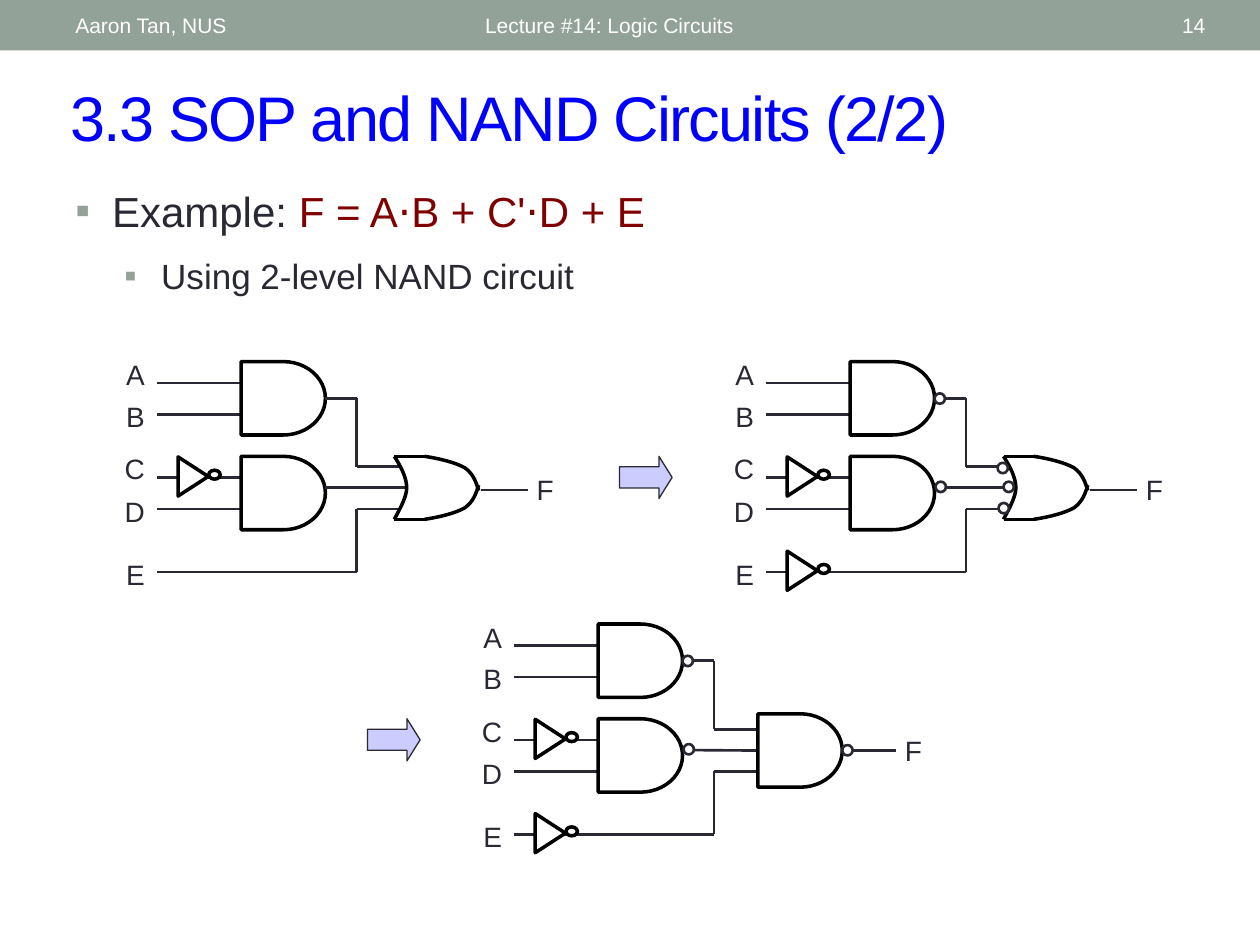
"""Build the SOP and NAND circuits slide."""
import itertools

import lxml.etree
import pptx
import pptx.dml.color
import pptx.enum.shapes
import pptx.enum.text
import pptx.oxml.ns
import pptx.util

Cm = pptx.util.Cm
Pt = pptx.util.Pt
MSO = pptx.enum.shapes.MSO_SHAPE
ALIGN = pptx.enum.text.PP_ALIGN
ANCHOR = pptx.enum.text.MSO_ANCHOR
qn = pptx.oxml.ns.qn

INK, BLACK, WHITE, SAGE = "292934", "000000", "FFFFFF", "93A299"
GATE_W, GATE_H, BUBBLE = 1.7, 1.48, 0.21
INPUTS = {"A": (0, 0.63), "B": (0.84, 1.27), "C": (1.89, 2.54), "D": (2.75, 3.17), "E": (4.02, 4.44)}
WIRE_X, GATE_X, BUS_X = 1.06, 2.75, 5.08
OR_H = 1.27
OR_BACK = [(0, 0), (0.13, 0.2), (0.25, 0.43), (0.25, 0.64), (0.25, 0.84), (0.05, 1.17), (0, OR_H)]
OR_TOP = [(0.61, 0), (0.94, 0.05), (1.24, 0.13), (1.42, 0.23), (1.6, 0.36), (1.65, 0.53), (1.7, 0.69)]


def color(value):
    """Return the colour for a hex string."""
    return pptx.dml.color.RGBColor.from_string(value)


def style(shape, fill, line, width):
    """Set fill and line of a shape, without shadow."""
    shape.shadow.inherit = False
    if fill:
        shape.fill.solid()
        shape.fill.fore_color.rgb = color(fill)
    else:
        shape.fill.background()
    if line:
        shape.line.color.rgb = color(line)
        shape.line.width = Pt(width)
    else:
        shape.line.fill.background()
    return shape


def add_shape(shapes, kind, x, y, w, h, fill=None, line=None, width=2):
    """Add a styled preset shape."""
    shape = shapes.add_shape(kind, Cm(x), Cm(y), Cm(w), Cm(h))
    return style(shape, fill, line, width)


def set_font(font, size, ink):
    """Set size and colour of an Arial font."""
    font.name, font.size = "Arial", Pt(size)
    font.color.rgb = color(ink)


def add_text(shapes, text, x, y, w, h, size, ink, align=ALIGN.LEFT, anchor=ANCHOR.TOP):
    """Add a one-paragraph text box and return its paragraph."""
    tf = shapes.add_textbox(Cm(x), Cm(y), Cm(w), Cm(h)).text_frame
    tf.word_wrap, tf.vertical_anchor = True, anchor
    p = tf.paragraphs[0]
    p.text, p.alignment = text, align
    set_font(p.font, size, ink)
    return p


def add_wire(shapes, *points, ink=INK, width=1.5):
    """Chain straight connectors through the points and return them."""
    wires = []
    for (x1, y1), (x2, y2) in itertools.pairwise(points):
        c = shapes.add_connector(pptx.enum.shapes.MSO_CONNECTOR.STRAIGHT, Cm(x1), Cm(y1), Cm(x2), Cm(y2))
        c.line.color.rgb = color(ink)
        c.line.width = Pt(width)
        lxml.etree.SubElement(c._element.spPr, qn("a:effectLst"))
        wires.append(c)
    return wires


def add_gate(shapes, x, y):
    """Add an AND gate body."""
    return add_shape(shapes, MSO.FLOWCHART_DELAY, x, y, GATE_W, GATE_H, line=BLACK)


def add_bubble(shapes, x, y):
    """Add an inversion bubble."""
    add_shape(shapes, MSO.OVAL, x, y, BUBBLE, BUBBLE, WHITE, INK, 1.5)


def add_inverter(shapes, x, y):
    """Add a NOT gate whose unrotated triangle starts at x, y."""
    add_shape(shapes, MSO.FLOWCHART_MERGE, x, y, 0.79, 0.61, WHITE, BLACK).rotation = 270
    add_shape(shapes, MSO.OVAL, x + 0.71, y + 0.18, 0.23, 0.18, WHITE, BLACK)


def add_curve(shapes, x, y, points):
    """Draw a chain of two cubic Bezier curves."""
    start, *rest = [(Cm(x + px), Cm(y + py)) for px, py in points]
    builder = shapes.build_freeform(*start)
    builder.add_line_segments(rest, close=False)
    shape = style(builder.convert_to_shape(), None, BLACK, 2)
    lines = list(shape._element.iter(qn("a:lnTo")))
    for i in range(0, len(lines), 3):
        bezier = lxml.etree.Element(qn("a:cubicBezTo"))
        lines[i].addprevious(bezier)
        for line in lines[i:i + 3]:
            bezier.append(line[0])
            line.getparent().remove(line)


def add_or_gate(shapes, x, y):
    """Add an OR gate from three curves and two straight edges."""
    add_curve(shapes, x, y, OR_BACK)
    for edge_y in (y, y + OR_H):
        add_wire(shapes, (x, edge_y), (x + OR_TOP[0][0], edge_y), ink=BLACK, width=2)
    add_curve(shapes, x, y, OR_TOP)
    add_curve(shapes, x, y, [(px, OR_H - py) for px, py in OR_TOP])


def add_circuit(s, x, y, inverted=False, nand=False):
    """Draw one version of the circuit with its top left corner at x, y."""
    shapes = s.shapes.add_group_shape().shapes
    if inverted:
        arrow = add_shape(shapes, MSO.RIGHT_ARROW, x - 1.9, y + 2.11, 1.06, 0.85, "CCCCFF", INK, 0.75)
        arrow.adjustments[1] = 0.312
    for name, (label_y, wire_y) in INPUTS.items():
        add_text(shapes, name, x, y + label_y, WIRE_X, 0.94, 16, INK, ALIGN.RIGHT)
        if name != "E":
            add_wire(shapes, (x + WIRE_X, y + wire_y), (x + GATE_X, y + wire_y))
    upper = add_gate(shapes, x + GATE_X, y + 0.2)
    add_gate(shapes, x + GATE_X, y + 2.11)

    end_x = x + 5.93
    bus = x + BUS_X
    gate_out = x + GATE_X + GATE_W
    from_upper = add_wire(shapes, (gate_out, y + 0.94), (bus, y + 0.94), (bus, y + 2.32), (end_x, y + 2.32))
    from_upper[0].begin_connect(upper, 3)
    middle = add_wire(shapes, (gate_out, y + 2.74), (x + 6.1, y + 2.74))[0]
    add_wire(shapes, (x + WIRE_X, y + 4.44), (bus, y + 4.44), (bus, y + 3.17), (end_x, y + 3.17))

    out_x, out_y, label_y = (7.8, 2.75, 2.29) if nand else (7.58, 2.79, 2.31)
    add_wire(shapes, (x + out_x, y + out_y), (x + out_x + 0.95, y + out_y))
    add_text(shapes, "F", x + out_x + 0.88, y + label_y, 1.22, 0.94, 16, INK)
    if nand:
        middle.end_connect(add_gate(shapes, x + 5.97, y + 2.01), 1)
    else:
        add_or_gate(shapes, x + 5.84, y + 2.11)

    for inverter_y in (2.21, 4.11) if inverted else (2.21,):
        add_inverter(shapes, x + 1.39, y + inverter_y)
    bubbles = [(4.45, 0.84), (4.47, 2.62)] if inverted else []
    if nand:
        bubbles += [(7.67, 2.64)]
    elif inverted:
        bubbles += [(5.72, 2.24), (5.84, 2.62), (5.74, 3.05)]
    for bubble_x, bubble_y in bubbles:
        add_bubble(shapes, x + bubble_x, y + bubble_y)


def add_header(s, x, y, w, h):
    """Draw the header bar with its three texts."""
    add_shape(s.shapes, MSO.RECTANGLE, x, y, w, h, SAGE)
    for text, left, width, align in (("Aaron Tan, NUS", 1.27, 8.05, ALIGN.LEFT),
                                     ("Lecture #14: Logic Circuits", 9.53, 11.43, ALIGN.LEFT),
                                     ("14", 22.14, 2.41, ALIGN.RIGHT)):
        add_text(s.shapes, text, x + left, y + 0.05, width, 0.91, 12, WHITE, align, ANCHOR.MIDDLE)


def add_title(s, x, y, w, h):
    """Write the slide title with tightened letters."""
    p = add_text(s.shapes, "3.3 SOP and NAND Circuits (2/2)", x, y, w, h, 36, "0000FF", anchor=ANCHOR.MIDDLE)
    p.runs[0]._r.get_or_add_rPr().set("spc", "-100")


def set_bullet(p, margin):
    """Give a paragraph a hanging square bullet."""
    pPr = p._p.get_or_add_pPr()
    pPr.set("marL", str(Cm(margin)))
    pPr.set("indent", str(-Cm(0.74)))
    ink = lxml.etree.Element(qn("a:buClr"))
    lxml.etree.SubElement(ink, qn("a:srgbClr"), val=SAGE)
    font = lxml.etree.Element(qn("a:buFont"), typeface="Arial")
    char = lxml.etree.Element(qn("a:buChar"), char="▪")
    defaults = pPr.find(qn("a:defRPr"))
    for element in (ink, font, char):
        defaults.addprevious(element)


def add_body(s, x, y, w, h):
    """Write the two bulleted lines."""
    p = add_text(s.shapes, "Example:", x, y, w, h, 24, INK)
    r = p.add_run()
    r.text = " F = A⋅B + C'⋅D + E"
    r.font.color.rgb = color("800000")
    set_bullet(p, 0.74)
    p = p._parent.add_paragraph()
    p.text, p.level, p.space_before = "Using 2-level NAND circuit", 1, Pt(11)
    set_font(p.font, 20, INK)
    set_bullet(p, 1.73)


def main():
    """Build and save the slide."""
    prs = pptx.Presentation()
    prs.slide_width, prs.slide_height = Cm(25.4), Cm(19.05)
    s = prs.slides.add_slide(prs.slide_layouts[6])
    add_header(s, 0, 0, 25.4, 1.02)
    add_title(s, 1.17, 1.45, 23.04, 1.78)
    add_body(s, 1.27, 3.61, 22.86, 2.64)
    add_circuit(s, 2.11, 7.09)
    add_circuit(s, 14.39, 7.09, inverted=True)
    add_circuit(s, 9.31, 12.38, inverted=True, nand=True)
    prs.save("out.pptx")


if __name__ == "__main__":
    main()
